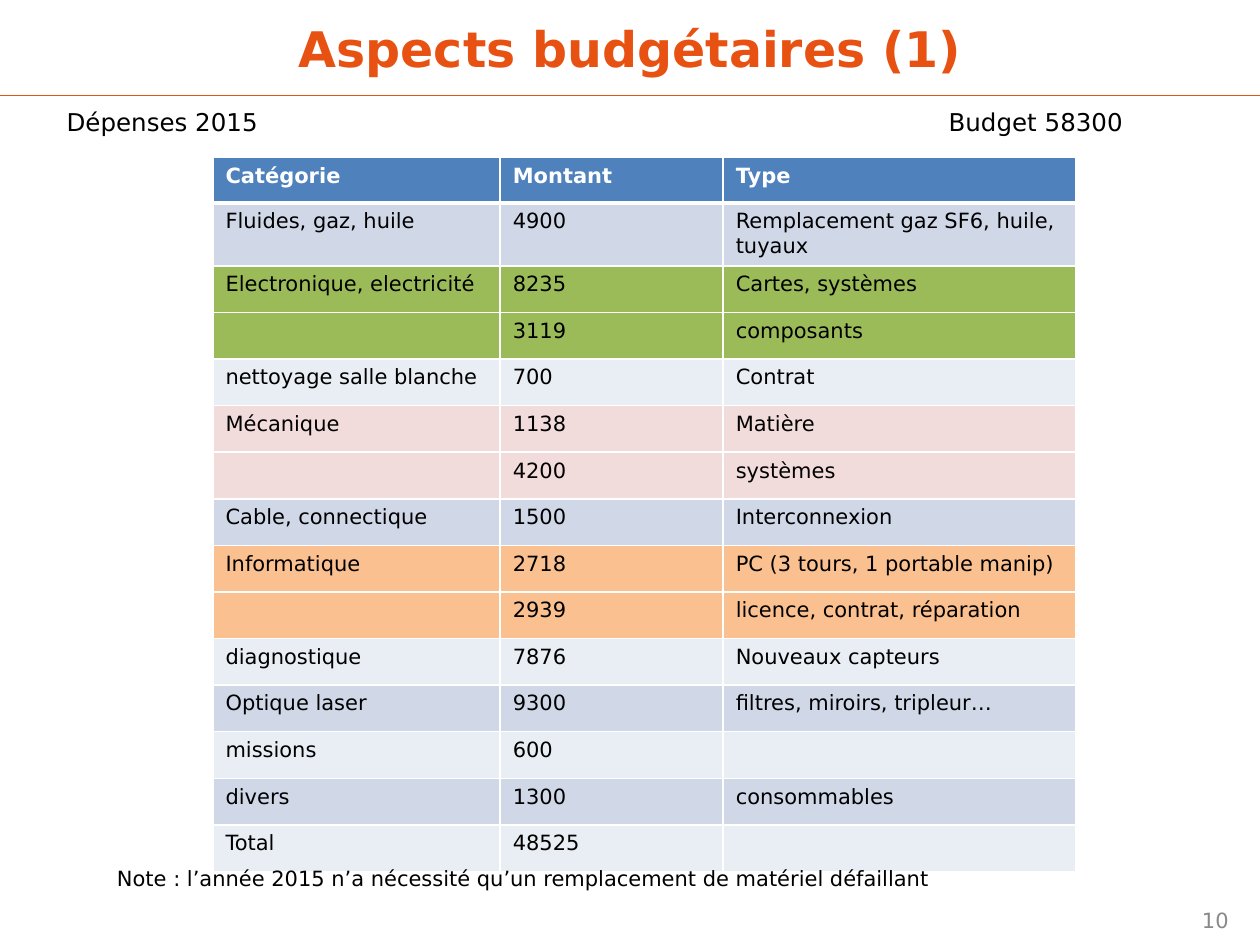
from lxml import etree
from pptx import Presentation
from pptx.dml.color import RGBColor
from pptx.enum.shapes import MSO_CONNECTOR
from pptx.enum.text import MSO_ANCHOR, MSO_AUTO_SIZE, PP_ALIGN
from pptx.oxml.ns import qn
from pptx.util import Inches, Pt

STRAIGHT = MSO_CONNECTOR.STRAIGHT
MIDDLE, TOP = MSO_ANCHOR.MIDDLE, MSO_ANCHOR.TOP
LEFT, CENTER, RIGHT = PP_ALIGN.LEFT, PP_ALIGN.CENTER, PP_ALIGN.RIGHT
NO_AUTOFIT = MSO_AUTO_SIZE.NONE

ORANGE = RGBColor(0xE7, 0x51, 0x12)
BLACK = RGBColor(0, 0, 0)
WHITE = RGBColor(0xFF, 0xFF, 0xFF)
GREY = RGBColor(0x89, 0x89, 0x89)
HEADER_BLUE = RGBColor(0x4F, 0x81, 0xBD)
BAND_DARK = RGBColor(0xD0, 0xD8, 0xE8)
BAND_LIGHT = RGBColor(0xE9, 0xED, 0xF4)
GREEN = RGBColor(0x9B, 0xBB, 0x59)
PINK = RGBColor(0xF2, 0xDC, 0xDB)
APRICOT = RGBColor(0xFA, 0xC0, 0x90)

FONT = "DejaVu Sans"
SLIDE_WIDTH, SLIDE_HEIGHT = 10, 7.5
TITLE_HEIGHT = 0.76
COLUMN_WIDTHS = (2.28, 1.77, 2.8)
TOP_ROW_HEIGHT, ROW_HEIGHT = 0.36, 0.37
BUDGET_TAB = 7

EXPENSES = [
    (HEADER_BLUE, "Catégorie", "Montant", "Type"),
    (BAND_DARK, "Fluides, gaz, huile", "4900", "Remplacement gaz SF6, huile, tuyaux"),
    (GREEN, "Electronique, electricité", "8235", "Cartes, systèmes"),
    (GREEN, "", "3119", "composants"),
    (BAND_LIGHT, "nettoyage salle blanche", "700", "Contrat"),
    (PINK, "Mécanique", "1138", "Matière"),
    (PINK, "", "4200", "systèmes"),
    (BAND_DARK, "Cable, connectique", "1500", "Interconnexion"),
    (APRICOT, "Informatique", "2718", "PC (3 tours, 1 portable manip)"),
    (APRICOT, "", "2939", "licence, contrat, réparation"),
    (BAND_LIGHT, "diagnostique", "7876", "Nouveaux capteurs"),
    (BAND_DARK, "Optique laser", "9300", "filtres, miroirs, tripleur…"),
    (BAND_LIGHT, "missions", "600", ""),
    (BAND_DARK, "divers", "1300", "consommables"),
    (BAND_LIGHT, "Total", "48525", ""),
]


def write(frame, text, size, color, bold=False, align=LEFT):
    paragraph = frame.paragraphs[0]
    paragraph.text = text
    paragraph.alignment = align
    font_format = {"name": FONT, "size": Pt(size), "bold": bold}
    for name, value in font_format.items():
        setattr(paragraph.font, name, value)
        for run in paragraph.runs:
            setattr(run.font, name, value)
    for run in paragraph.runs:
        run.font.color.rgb = color
    return paragraph


def add_title(slide, text):
    title = slide.shapes.title
    place = {"left": 0, "top": 0, "width": Inches(SLIDE_WIDTH), "height": Inches(TITLE_HEIGHT)}
    for name, value in place.items():
        setattr(title, name, value)
    title.text_frame.vertical_anchor = MIDDLE
    title.text_frame.auto_size = NO_AUTOFIT
    write(title.text_frame, text, 28, ORANGE, True, CENTER)


def add_rule(slide, top):
    rule = slide.shapes.add_connector(
        STRAIGHT, 0, Inches(top), Inches(SLIDE_WIDTH), Inches(top))
    rule.line.color.rgb = ORANGE
    rule.line.width = Pt(0.75)
    etree.SubElement(rule._element.spPr, qn("a:effectLst"))


def add_text(slide, box, text, size, color=BLACK, align=LEFT, anchor=TOP):
    frame = slide.shapes.add_textbox(*map(Inches, box)).text_frame
    frame.word_wrap = True
    frame.vertical_anchor = anchor
    return write(frame, text, size, color, align=align)


def add_tab_stop(paragraph, position):
    stops = etree.SubElement(paragraph._p.get_or_add_pPr(), qn("a:tabLst"))
    etree.SubElement(stops, qn("a:tab"), pos=str(Inches(position)), algn="l")


def add_borders(cell, widths):
    properties = cell._tc.get_or_add_tcPr()
    for side, width in zip("LRTB", widths):
        border = etree.SubElement(properties, qn(f"a:ln{side}"), w=str(Pt(width)))
        fill = etree.SubElement(border, qn("a:solidFill"))
        etree.SubElement(fill, qn("a:srgbClr"), val=str(WHITE))


def add_expenses(slide, left, top):
    heights = [TOP_ROW_HEIGHT] * 2 + [ROW_HEIGHT] * (len(EXPENSES) - 2)
    table = slide.shapes.add_table(
        len(EXPENSES), len(COLUMN_WIDTHS), Inches(left), Inches(top),
        Inches(sum(COLUMN_WIDTHS)), Inches(sum(heights))).table
    table.horz_banding = False
    for column, width in zip(table.columns, COLUMN_WIDTHS):
        column.width = Inches(width)
    for index, (fill, *texts) in enumerate(EXPENSES):
        is_header = index == 0
        row = table.rows[index]
        row.height = Inches(heights[index])
        borders = (1, 1, 3 if index == 1 else 1, 3 if is_header else 1)
        for cell, text in zip(row.cells, texts):
            add_borders(cell, borders)
            cell.fill.solid()
            cell.fill.fore_color.rgb = fill
            write(cell.text_frame, text, 12, WHITE if is_header else BLACK, is_header)


def main():
    deck = Presentation()
    deck.slide_width = Inches(SLIDE_WIDTH)
    deck.slide_height = Inches(SLIDE_HEIGHT)
    slide = deck.slides.add_slide(deck.slide_layouts[5])
    add_text(slide, (7.52, 7.1, 2.33, 0.4), "10", 12, GREY, RIGHT, MIDDLE)
    add_title(slide, "Aspects budgétaires (1)")
    add_rule(slide, TITLE_HEIGHT)
    add_expenses(slide, 1.69, 1.25)
    summary = add_text(slide, (0.43, 0.8, 8.65, 0.34), "Dépenses 2015\tBudget 58300", 14)
    add_tab_stop(summary, BUDGET_TAB)
    add_text(slide, (0.83, 6.82, 6.91, 0.3),
             "Note : l’année 2015 n’a nécessité qu’un remplacement de matériel défaillant", 12)
    deck.save("out.pptx")


if __name__ == "__main__":
    main()
